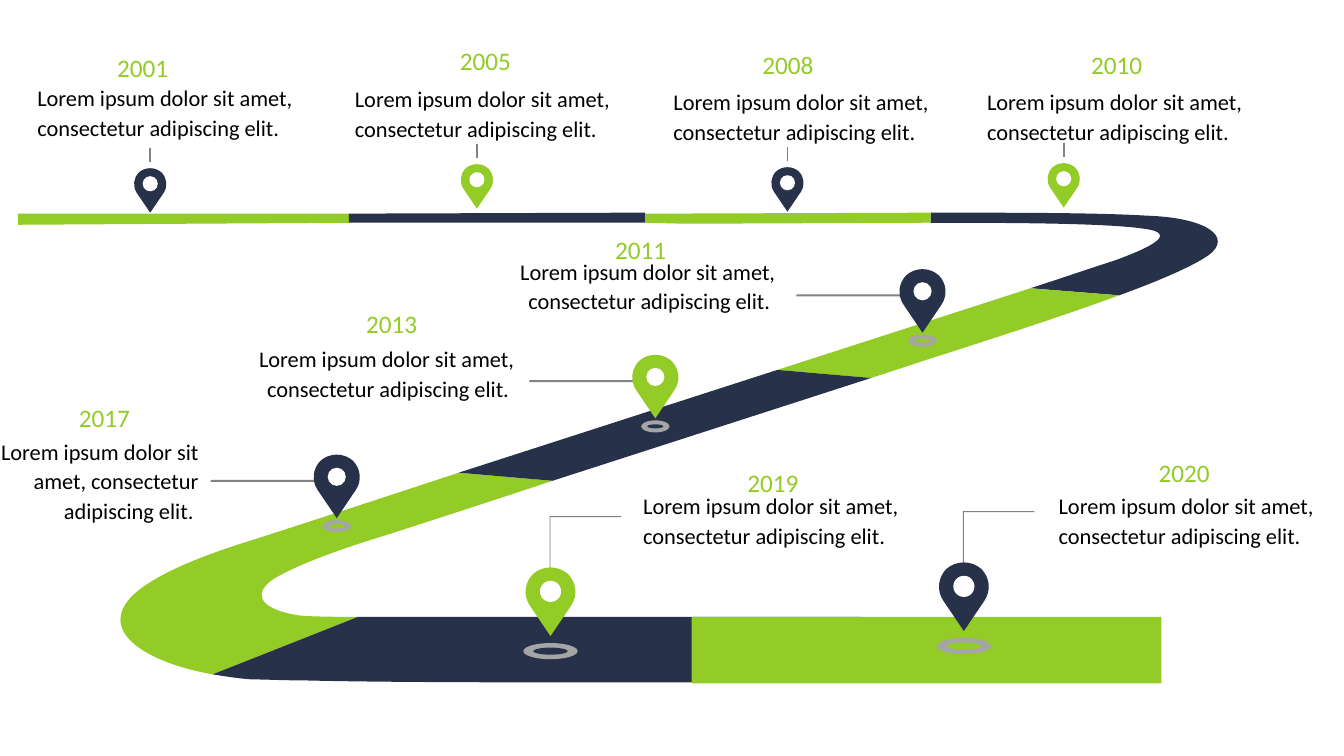
from pptx import Presentation
from pptx.dml.color import RGBColor
from pptx.enum.shapes import MSO_CONNECTOR, MSO_SHAPE
from pptx.enum.text import MSO_AUTO_SIZE, PP_ALIGN
from pptx.oxml.ns import qn
from pptx.util import Inches, Pt
from lxml.etree import SubElement

COLORS = {"green": "93CB27", "navy": "27314A", "leader": "828282",
          "ring": "A5A5A5", "white": "FFFFFF", "text": "000000"}
FONT = "Calibri"
BODY = "Lorem ipsum dolor sit amet, consectetur adipiscing elit."

ROAD = [
    ("green", (2.93, 6.1), [
        (2.54, 6.03, 2.52, 5.87, 2.72, 5.74), (2.94, 5.61, 3.33, 5.46, 3.86, 5.3),
        (4.32, 5.15, 4.88, 4.97, 5.48, 4.77), (4.55, 4.69),
        (3.76, 4.95, 3, 5.2, 2.37, 5.4), (2, 5.52, 1.74, 5.63, 1.55, 5.74),
        (0.82, 6.15, 1.32, 6.55, 2.11, 6.69), (3.55, 6.12),
        (3.4, 6.12, 3.01, 6.12, 2.93, 6.1)]),
    ("navy", (8.54, 6.12), [
        (3.55, 6.12), (2.11, 6.69), (2.23, 6.71, 2.36, 6.73, 2.49, 6.74),
        (2.62, 6.74, 2.8, 6.75, 3.02, 6.75), (3.81, 6.77, 5.12, 6.77, 6.52, 6.77),
        (6.88, 6.77)]),
    ("navy", (11.99, 2.53), [
        (12.23, 2.35, 11.97, 2.16, 11.38, 2.14), (10.88, 2.11, 10.11, 2.11, 9.23, 2.11),
        (9.23, 2.21), (10.29, 2.21, 11.1, 2.22, 11.41, 2.28),
        (11.56, 2.31, 11.6, 2.39, 11.04, 2.59), (10.91, 2.63, 10.62, 2.73, 10.22, 2.86),
        (11.1, 2.93), (11.54, 2.77, 11.85, 2.63, 11.99, 2.53)]),
    ("green", (9.19, 3.57), [
        (9.94, 3.33, 10.61, 3.11, 11.1, 2.93), (10.22, 2.86), (7.71, 3.67), (8.64, 3.75)]),
    ("green", (0.18, 2.12), [(0.18, 2.23), (3.46, 2.21), (3.46, 2.12)]),
    ("navy", (3.46, 2.12), [(3.46, 2.21), (6.4, 2.21), (6.4, 2.11)]),
    ("green", (6.4, 2.12), [(6.4, 2.21), (6.79, 2.22), (9.23, 2.21), (9.23, 2.11)]),
    ("navy", (8.64, 3.75), [(7.71, 3.67), (4.55, 4.69), (5.48, 4.77)]),
]
ROAD_END = (6.86, 6.12, 4.66, 0.66)

PIN = [(-0.19, -0.28), (-0.25, -0.37, -0.24, -0.49, -0.16, -0.57),
       (-0.07, -0.65, 0.07, -0.65, 0.16, -0.57), (0.24, -0.49, 0.25, -0.37, 0.19, -0.28)]
ELBOW = [(0, -0.47), (0, -1.18), (0.7, -1.18), (0.7, -1.19), (-0.01, -1.19), (-0.01, -0.47)]
PIN_KINDS = {
    "top": {"scale": 0.7, "hole": 0.15},
    "slope": {"scale": 1, "hole": 0.18, "ring": (0.28, 0.12), "inner": (0.16, 0.04), "drop": 0.08},
    "base": {"scale": 1.08, "hole": 0.21, "ring": (0.54, 0.16), "inner": (0.34, 0.07), "drop": 0.15},
}

MILESTONES = [
    ("2001", (1.06, 0.47), (0.25, 0.75, 2.8, 0.7), (1.49, 2.11), "top", "navy"),
    ("2005", (4.46, 0.4), (3.4, 0.76, 2.8, 0.7), (4.73, 2.07), "top", "green"),
    ("2008", (7.46, 0.44), (6.56, 0.79, 2.8, 0.7), (7.81, 2.1), "top", "navy"),
    ("2010", (10.72, 0.44), (9.67, 0.79, 2.8, 0.7), (10.55, 2.06), "top", "green"),
    ("2011", (6, 2.28), (5.01, 2.47, 2.8, 0.7), (9.15, 3.3), "slope", "navy"),
    ("2013", (3.53, 3.01), (2.42, 3.34, 2.8, 0.7), (6.5, 4.15), "slope", "green"),
    ("2017", (0.68, 3.94), (-0.24, 4.26, 2.33, 0.99), (3.34, 5.14), "slope", "navy"),
    ("2019", (7.31, 4.59), (6.26, 4.8, 2.8, 0.7), (5.46, 6.31), "base", "green"),
    ("2020", (11.39, 4.49), (10.38, 4.8, 2.8, 0.7), (9.56, 6.26), "base", "navy"),
]


def paint(shape, color):
    shape.shadow.inherit = False
    shape.fill.solid()
    shape.fill.fore_color.rgb = RGBColor.from_string(COLORS[color])
    shape.line.fill.background()


def add_preset(shapes, preset, box, color):
    paint(shapes.add_shape(preset, *map(Inches, box)), color)


def add_ellipse(shapes, center_x, center_y, width, height, color):
    box = (center_x - width / 2, center_y - height / 2, width, height)
    add_preset(shapes, MSO_SHAPE.OVAL, box, color)


def add_outline(shapes, start, segments, color, origin=(0, 0), scale=1):
    def position(x, y):
        return Inches(origin[0] + x * scale), Inches(origin[1] + y * scale)

    points = [position(*segment[index:index + 2])
              for segment in segments for index in range(0, len(segment), 2)]
    builder = shapes.build_freeform(*position(*start))
    builder.add_line_segments(points, close=True)
    shape = builder.convert_to_shape()
    lines = iter(list(shape._element.iter(qn("a:lnTo"))))
    for segment in segments:
        steps = [next(lines) for _ in range(len(segment) // 2)]
        if len(steps) == 3:
            curve = steps[0].makeelement(qn("a:cubicBezTo"))
            steps[0].addprevious(curve)
            for step in steps:
                curve.append(step[0])
                step.getparent().remove(step)
    paint(shape, color)


def add_tick(shapes, x, top, bottom):
    connector = shapes.add_connector(MSO_CONNECTOR.STRAIGHT, Inches(x), Inches(bottom),
                                     Inches(x), Inches(top))
    connector.line.color.rgb = RGBColor.from_string(COLORS["leader"])
    connector.line.width = Pt(1.25)
    SubElement(connector._element.spPr, qn("a:effectLst"))


def add_marker(shapes, tip, kind, color):
    x, y = tip
    size = PIN_KINDS[kind]
    if kind == "top":
        add_tick(shapes, x, y - 0.64, y - 0.5)
    else:
        road_color = "green" if color == "navy" else "navy"
        if kind == "slope":
            add_preset(shapes, MSO_SHAPE.RECTANGLE, (x - 1.25, y - 0.38, 1.16, 0.02), "leader")
        add_ellipse(shapes, x, y + size["drop"], *size["ring"], "ring")
        add_ellipse(shapes, x, y + size["drop"], *size["inner"], road_color)
        if kind == "base":
            add_outline(shapes, ELBOW[0], ELBOW[1:], "leader", tip)
    add_outline(shapes, (0, 0), PIN, color, tip, size["scale"])
    add_ellipse(shapes, x, y - 0.41 * size["scale"], size["hole"], size["hole"], "white")


def add_text(shapes, box, text, size, color, align, wrap):
    frame = shapes.add_textbox(*map(Inches, box)).text_frame
    frame.word_wrap = wrap
    frame.auto_size = MSO_AUTO_SIZE.SHAPE_TO_FIT_TEXT
    frame.text = text
    paragraph = frame.paragraphs[0]
    paragraph.alignment = align
    font = paragraph.runs[0].font
    font.name = FONT
    font.size = Pt(size)
    font.color.rgb = RGBColor.from_string(COLORS[color])
    return frame


def add_description(shapes, box, kind):
    on_slope = kind == "slope"
    frame = add_text(shapes, box, BODY + " " if on_slope else BODY, 16, "text",
                     PP_ALIGN.RIGHT if on_slope else PP_ALIGN.LEFT, True)
    frame.margin_left = frame.margin_right = Inches(0.12)
    frame.margin_top = frame.margin_bottom = Inches(0.06)
    frame.paragraphs[0].line_spacing = 1.1


def main():
    presentation = Presentation()
    presentation.slide_width = Inches(13.33)
    presentation.slide_height = Inches(7.5)
    slide = presentation.slides.add_slide(presentation.slide_layouts[6])
    for color, start, segments in ROAD:
        add_outline(slide.shapes, start, segments, color)
    add_preset(slide.shapes, MSO_SHAPE.RECTANGLE, ROAD_END, "green")
    for _, _, _, tip, kind, color in MILESTONES:
        add_marker(slide.shapes.add_group_shape().shapes, tip, kind, color)
    for _, _, body_box, _, kind, _ in MILESTONES:
        add_description(slide.shapes, body_box, kind)
    for year, corner, *_ in MILESTONES:
        add_text(slide.shapes, (*corner, 0.71, 0.4), year, 18, "green", PP_ALIGN.CENTER, False)
    presentation.save("out.pptx")


if __name__ == "__main__":
    main()
